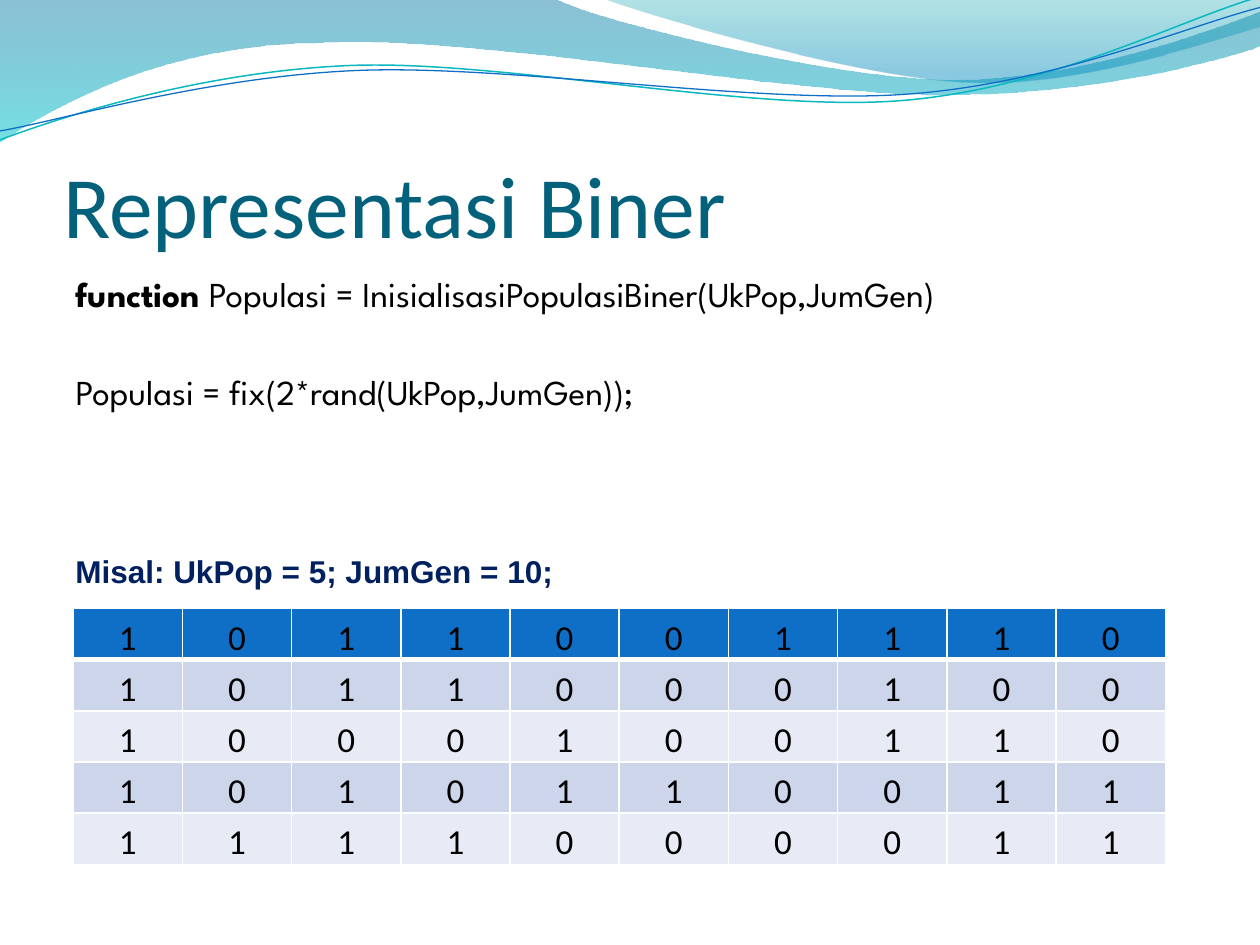
"""Build the "Representasi Biner" slide with its wave header and binary population table."""
from math import cos, radians, sin
from lxml.etree import SubElement
from pptx import Presentation
from pptx.dml.color import RGBColor
from pptx.enum.text import MSO_ANCHOR as ANCHOR, MSO_AUTO_SIZE as AUTO, PP_ALIGN as ALIGN
from pptx.oxml import parse_xml
from pptx.oxml.ns import nsdecls, qn
from pptx.util import Inches, Pt

BLACK = RGBColor(0x00, 0x00, 0x00)
TITLE = RGBColor(0x04, 0x61, 0x7B)
NAVY = RGBColor(0x00, 0x20, 0x60)
BLUE = RGBColor(0x0F, 0x6F, 0xC6)
TEAL = RGBColor(0x0A, 0xB8, 0xBF)
BAND_DARK = RGBColor(0xCC, 0xD5, 0xEA)
BAND_LIGHT = RGBColor(0xE7, 0xEB, 0xF5)
WAVE_TOP = RGBColor(0x00, 0x74, 0xA1)
WAVE_BOTTOM = RGBColor(0x00, 0xC6, 0xCF)
CREST_TOP = RGBColor(0x00, 0xA1, 0xA9)
CREST_BOTTOM = RGBColor(0x00, 0x8B, 0xBF)
TILT = 2.7


def add_curve(shapes, segments, close, center=(0, 0), tilt=0):
    (cx, cy), c, s = center, cos(radians(tilt)), sin(radians(tilt))
    points = [(Inches(cx + (x - cx) * c - (y - cy) * s), Inches(cy + (x - cx) * s + (y - cy) * c))
              for seg in segments for x, y in zip(seg[::2], seg[1::2])]
    builder = shapes.build_freeform(*points[0])
    builder.add_line_segments(points[1:], close=close)
    sp = builder.convert_to_shape()
    sp.shadow.inherit = False
    sp.rotation = -tilt
    lines = iter(list(sp._element.iter(qn("a:lnTo"))))
    for seg in segments[1:]:
        first = next(lines)
        if len(seg) == 6:
            first.tag = qn("a:cubicBezTo")
            for line in (next(lines), next(lines)):
                first.append(line[0])
                line.getparent().remove(line)
    return sp


def style_run(r, font, size, color, bold=False):
    r.font.name, r.font.size, r.font.bold = font, Pt(size), bold
    r.font.color.rgb = color


prs = Presentation()
prs.slide_width, prs.slide_height = Inches(10), Inches(7.5)
slide = prs.slides.add_slide(prs.slide_layouts[1])
shapes = slide.shapes
title, body = shapes.title, slide.placeholders[1]

waves = [
    ([(0, -0.01), (4.4, -0.01), (4.76, 0.17, 6.64, 0.63, 7.58, 0.63), (8.53, 0.63, 9.58, 0.26, 10, 0.09),
      (10.01, 0.36), (9.83, 0.44, 8.7, 0.76, 7.46, 0.75), (6.22, 0.75, 3.82, 0.28, 2.57, 0.34),
      (1.29, 0.35, 0.46, 0.83, -0.01, 1.13)],
     [(0, WAVE_TOP, 45), (1, WAVE_BOTTOM, 55)]),
    ([(4.79, -0.01), (5.09, 0.11, 6.82, 0.62, 7.69, 0.65), (8.56, 0.69, 9.61, 0.32, 10, 0.21), (10, 0)],
     [(0, CREST_TOP, 30), (0.8, CREST_BOTTOM, 45)]),
]
for segments, stops in waves:
    sp = add_curve(shapes, segments, True)
    sp.line.fill.background()
    sp.fill.gradient()
    sp.fill.gradient_angle = 270
    for stop, (position, color, alpha) in zip(sp.fill.gradient_stops, stops):
        stop.position, stop.color.rgb = position, color
    for clr, (position, color, alpha) in zip(sp._element.spPr.iter(qn("a:srgbClr")), stops):
        SubElement(clr, qn("a:alpha")).set("val", str(alpha * 1000))

strands = [
    ([(0, 1.11), (0.48, 0.93, 1.58, 0.57, 2.77, 0.52), (3.95, 0.47, 5.93, 0.89, 7.13, 0.8),
      (8.33, 0.71, 9.38, 0.15, 9.98, -0.02)], (4.99, 0.58), TEAL, 0.85),
    ([(0, 1.04), (0.47, 0.96, 1.64, 0.61, 2.83, 0.56), (4.03, 0.51, 5.97, 0.83, 7.17, 0.75),
      (8.36, 0.67, 9.41, 0.21, 10, 0.06)], (5, 0.59), BLUE, 0.75),
]
for segments, center, color, width in strands:
    sp = add_curve(shapes, segments, False, center, TILT)
    sp.fill.background()
    sp.line.color.rgb, sp.line.width = color, Pt(width)

for sp, top, height in ((title, 0.78, 1.25), (body, 2.11, 4.8)):
    sp.left, sp.top, sp.width, sp.height = Inches(0.5), Inches(top), Inches(9), Inches(height)
    shapes.element.append(sp._element)

tf = title.text_frame
tf.text = "Representasi Biner"
tf.vertical_anchor = ANCHOR.BOTTOM
tf.margin_left = tf.margin_right = tf.margin_bottom = 0
tf.margin_top = Inches(0.05)
tf.paragraphs[0].alignment = ALIGN.LEFT
style_run(tf.paragraphs[0].runs[0], "Calibri", 50, TITLE)

code = [
    (4, [("function", True), (" Populasi = InisialisasiPopulasiBiner(UkPop,JumGen)", False)]),
    (32, [("Populasi = fix(2*rand(UkPop,JumGen));", False)]),
]
tf = body.text_frame
for i, (space, runs) in enumerate(code):
    p = tf.add_paragraph() if i else tf.paragraphs[0]
    p.space_before = Pt(space)
    pPr = p._p.get_or_add_pPr()
    pPr.set("marL", str(Inches(0.3)))
    pPr.set("indent", str(Inches(-0.3)))
    SubElement(pPr, qn("a:buNone"))
    for text, bold in runs:
        r = p.add_run()
        r.text = text
        style_run(r, "League Spartan", 20, BLACK, bold)

population = ["1011001110", "1011000100", "1000100110", "1010110011", "1111000011"]
rows, cols = len(population), len(population[0])
table = shapes.add_table(rows, cols, Inches(0.58), Inches(4.83), Inches(8.67), Inches(2.03)).table
for i, genes in enumerate(population):
    for j, gene in enumerate(genes):
        cell = table.cell(i, j)
        cell.text = gene
        cell.vertical_anchor = ANCHOR.BOTTOM
        cell.margin_left = cell.margin_right = cell.margin_top = Inches(0.01)
        cell.margin_bottom = 0
        p = cell.text_frame.paragraphs[0]
        p.alignment = ALIGN.CENTER
        style_run(p.runs[0], "Calibri", 20, BLACK)
        cell.fill.solid()
        cell.fill.fore_color.rgb = BLUE if i == 0 else BAND_DARK if i % 2 else BAND_LIGHT
        widths = {"L": 1, "R": 1, "T": 3 if i == 1 else 1, "B": 3 if i == 0 else 1}
        for k, (side, width) in enumerate(widths.items()):
            cell._tc.get_or_add_tcPr().insert(k, parse_xml(
                f'<a:ln{side} {nsdecls("a")} w="{Pt(width)}"><a:solidFill>'
                f'<a:srgbClr val="FFFFFF"/></a:solidFill></a:ln{side}>'))

tf = shapes.add_textbox(Inches(0.5), Inches(4.33), Inches(4.03), Inches(0.4)).text_frame
tf.text = "Misal: UkPop = 5; JumGen = 10;"
tf.word_wrap = False
tf.auto_size = AUTO.SHAPE_TO_FIT_TEXT
style_run(tf.paragraphs[0].runs[0], "Arial", 18, NAVY, True)

prs.save("out.pptx")
